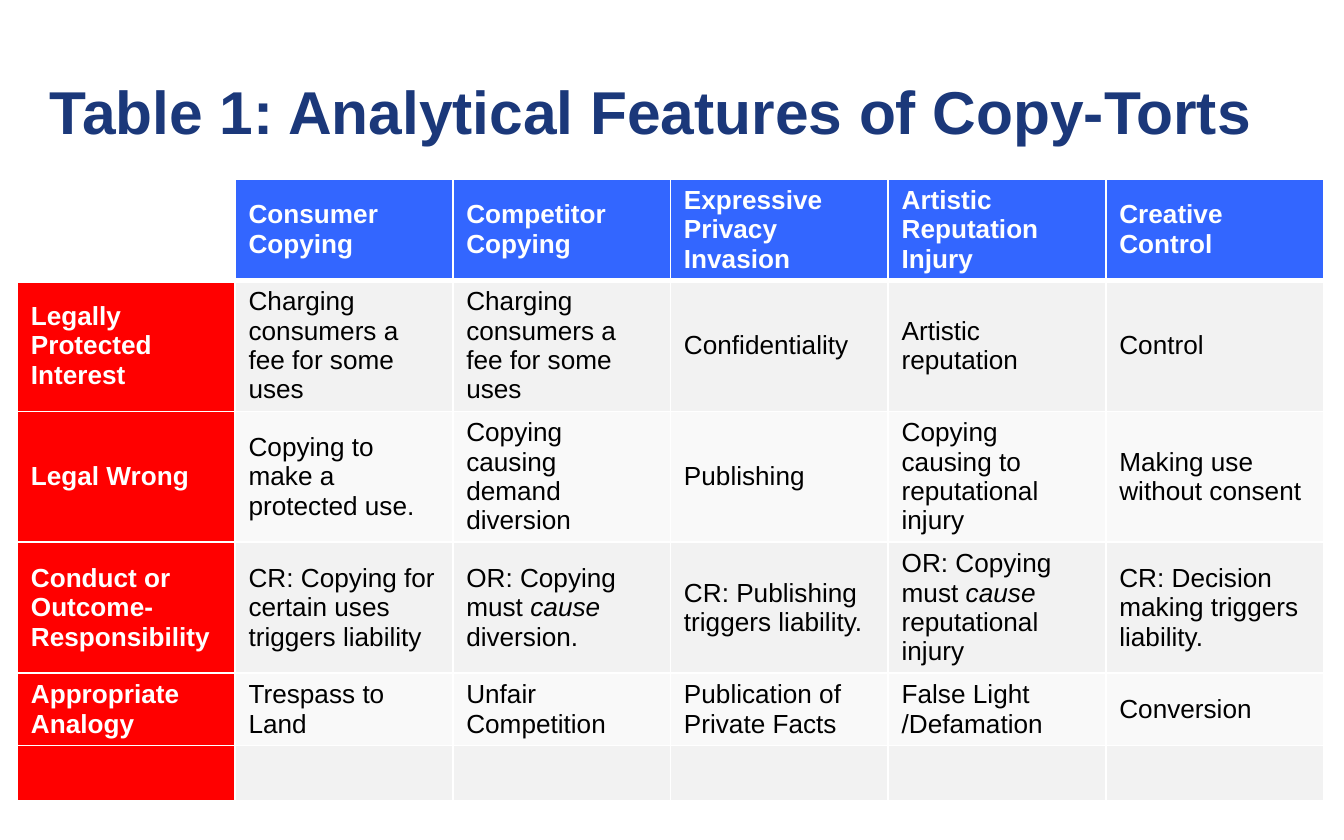
from lxml import etree
from pptx import Presentation
from pptx.dml.color import RGBColor
from pptx.enum.text import MSO_ANCHOR, MSO_AUTO_SIZE, PP_ALIGN
from pptx.oxml.ns import qn
from pptx.util import Inches, Pt

MIDDLE, BOTTOM = MSO_ANCHOR.MIDDLE, MSO_ANCHOR.BOTTOM
LEFT = PP_ALIGN.LEFT
NO_AUTOFIT = MSO_AUTO_SIZE.NONE
TITLE_ONLY = 5

NAVY = RGBColor(0x1B, 0x38, 0x7A)
BLUE = RGBColor(0x33, 0x66, 0xFF)
RED = RGBColor(0xFF, 0x00, 0x00)
WHITE = RGBColor(0xFF, 0xFF, 0xFF)
BLACK = RGBColor(0x00, 0x00, 0x00)
BANDS = (RGBColor(0xF2, 0xF2, 0xF2), RGBColor(0xF9, 0xF9, 0xF9))

# Asterisks enclose italic text
ROWS = [
    ["", "Consumer Copying", "Competitor Copying", "Expressive Privacy Invasion",
     "Artistic Reputation Injury", "Creative Control"],
    ["Legally Protected Interest", "Charging consumers a fee for some uses",
     "Charging consumers a fee for some uses", "Confidentiality",
     "Artistic reputation", "Control"],
    ["Legal Wrong", "Copying to make a protected use.",
     "Copying causing demand diversion", "Publishing",
     "Copying causing to reputational injury", "Making use without consent"],
    ["Conduct or Outcome- Responsibility",
     "CR: Copying for certain uses triggers liability",
     "OR: Copying must *cause *diversion.", "CR: Publishing triggers liability.",
     "OR: Copying must *cause *reputational injury",
     "CR: Decision making triggers liability."],
    ["Appropriate Analogy", "Trespass to Land", "Unfair Competition",
     "Publication of Private Facts", "False Light /Defamation", "Conversion"],
    [""] * 6,
]


class SlideBuilder:
    font_name = "Arial"

    def __init__(self, slide):
        self.slide = slide

    def style(self, paragraph, size, color, bold):
        font = paragraph.font
        font.name, font.size, font.bold = self.font_name, Pt(size), bold
        font.color.rgb = color

    def title(self, text, left, top, width, height):
        title = self.slide.shapes.title
        title.left, title.top = Inches(left), Inches(top)
        title.width, title.height = Inches(width), Inches(height)
        frame = title.text_frame
        frame.text = text
        frame.word_wrap = True
        frame.auto_size = NO_AUTOFIT
        frame.vertical_anchor = BOTTOM
        paragraph = frame.paragraphs[0]
        paragraph.alignment = LEFT
        self.style(paragraph, 32.4, NAVY, True)

    def borders(self, cell, top, bottom):
        properties = cell._tc.get_or_add_tcPr()
        widths = {"a:lnL": 1, "a:lnR": 1, "a:lnT": top, "a:lnB": bottom}
        for position, (tag, width) in enumerate(widths.items()):
            line = etree.Element(qn(tag), w=str(Pt(width)))
            fill = etree.SubElement(line, qn("a:solidFill"))
            etree.SubElement(fill, qn("a:srgbClr"), val=str(WHITE))
            properties.insert(position, line)

    def cell(self, cell, text, fill, color, bold):
        cell.vertical_anchor = MIDDLE
        if fill is None:
            cell.fill.background()
        else:
            cell.fill.solid()
            cell.fill.fore_color.rgb = fill
        if not text:
            return
        paragraph = cell.text_frame.paragraphs[0]
        self.style(paragraph, 14, color, bold)
        for index, part in enumerate(text.split("*")):
            run = paragraph.add_run()
            run.text = part
            if index % 2:
                run.font.italic = True

    def table(self, rows, left, top, width, height, row_height):
        frame = self.slide.shapes.add_table(
            len(rows), len(rows[0]), Inches(left), Inches(top),
            Inches(width), Inches(height))
        table = frame.table
        for row_index, texts in enumerate(rows):
            # Rows grow to fit their text
            table.rows[row_index].height = Inches(row_height)
            for column_index, text in enumerate(texts):
                cell = table.cell(row_index, column_index)
                is_header = row_index == 0 or column_index == 0
                if row_index == 0:
                    fill = BLUE if column_index else None
                else:
                    fill = BANDS[(row_index - 1) % 2] if column_index else RED
                self.cell(cell, text, fill, WHITE if is_header else BLACK, is_header)
                self.borders(cell, top=3 if row_index == 1 else 1,
                             bottom=3 if row_index == 0 else 1)
        frame.height = Inches(height)


def main():
    presentation = Presentation()
    presentation.slide_width = Inches(10)
    presentation.slide_height = Inches(6.25)
    slide = presentation.slides.add_slide(presentation.slide_layouts[TITLE_ONLY])
    builder = SlideBuilder(slide)

    # Title
    builder.title("Table 1: Analytical Features of Copy-Torts", 0.27, 0.12, 9.58, 1.02)

    # Comparison of the copy-torts
    builder.table(ROWS, 0.13, 1.33, 9.72, 4.87, row_height=0.41)

    presentation.save("out.pptx")


if __name__ == "__main__":
    main()
